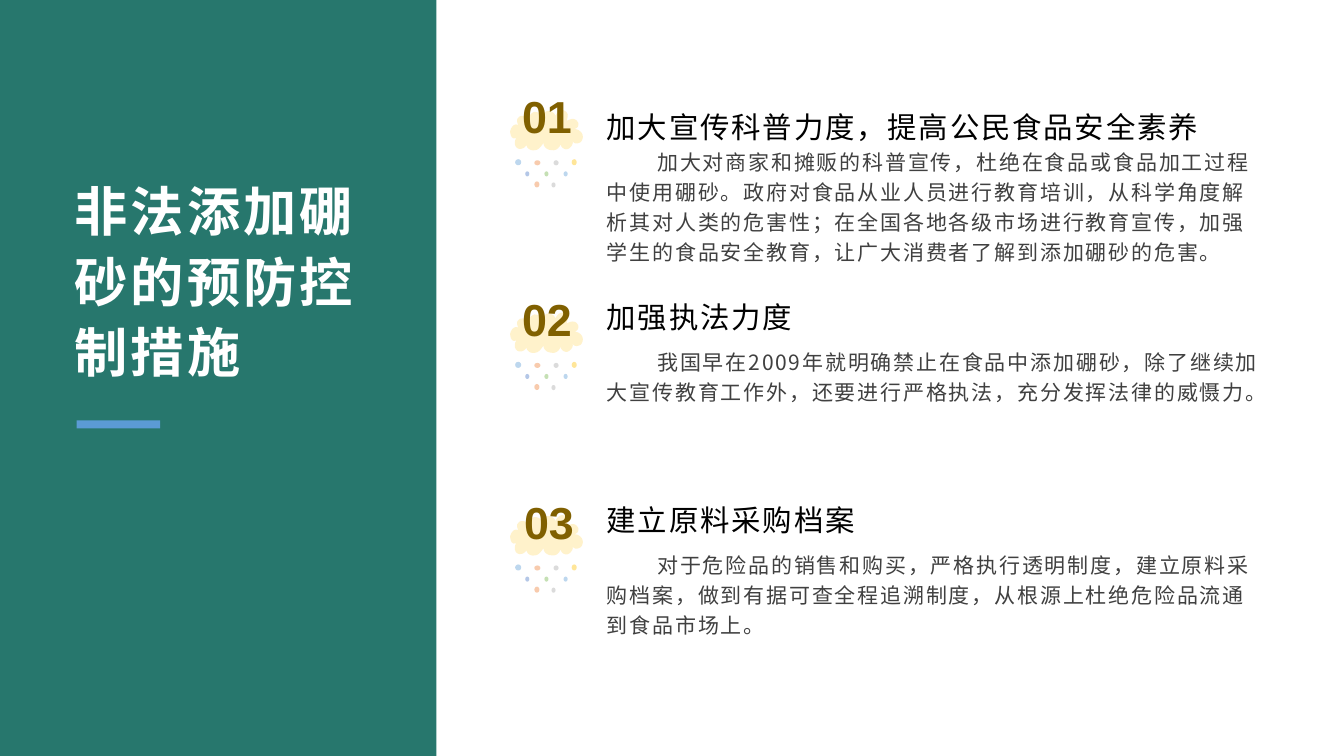
import lxml.etree
import pptx
import pptx.dml.color
import pptx.enum.shapes
import pptx.enum.text
import pptx.oxml.ns
import pptx.util

Inches = pptx.util.Inches
Pt = pptx.util.Pt
SHAPE = pptx.enum.shapes.MSO_SHAPE
ALIGN = pptx.enum.text.PP_ALIGN
ANCHOR = pptx.enum.text.MSO_ANCHOR
qn = pptx.oxml.ns.qn

STEP = 2.01  # drop from one measure to the next
LEFT, TOP = 5.06, 1.09  # corner of the first cloud

# Cloud outline in hundredths of an inch: a start, then Bézier triples
START = (52, 0)
CURVES = [
    (49, 0, 46, 3, 45, 6), (44, 3, 41, 1, 38, 1), (35, 1, 32, 4, 33, 7),
    (31, 4, 28, 2, 24, 2), (21, 3, 18, 6, 18, 9), (17, 8, 15, 6, 13, 6),
    (11, 6, 9, 6, 8, 8), (6, 9, 7, 13, 8, 15), (4, 13, 1, 17, 0, 21),
    (0, 24, 1, 30, 6, 28), (4, 31, 4, 36, 7, 38), (10, 40, 15, 38, 16, 35),
    (17, 39, 21, 41, 25, 40), (28, 40, 31, 36, 33, 33), (33, 37, 37, 40, 41, 40),
    (45, 41, 49, 38, 50, 34), (50, 37, 54, 40, 57, 39), (60, 38, 63, 34, 62, 31),
    (63, 34, 67, 34, 70, 32), (72, 30, 73, 26, 71, 23), (69, 20, 66, 19, 63, 19),
    (65, 19, 66, 18, 67, 17), (68, 15, 68, 13, 67, 12), (66, 10, 64, 9, 62, 9),
    (60, 9, 58, 10, 56, 11), (56, 11, 57, 7, 57, 7), (58, 3, 55, 1, 52, 0),
]

# Rain drops in hundredths of an inch: left, top, width, height, colour
DROPS = [
    (15, 61, 4, 5, "B4C7E7"), (41, 72, 4, 5, "DBDBDB"), (61, 49, 5, 6, "FFE699"),
    (43, 50, 5, 5, "DBDBDB"), (24, 71, 5, 6, "F8CBAD"), (34, 61, 4, 5, "C5E0B4"),
    (5, 49, 6, 6, "BDD7EE"), (53, 61, 4, 5, "BDD7EE"), (24, 50, 6, 5, "F8CBAD"),
]


def color(code):
    return pptx.dml.color.RGBColor.from_string(code)


def write(par, text, size, ink, font="Noto Sans CJK SC", bold=False, gap=0,
          align=ALIGN.LEFT, line=1.0, after=0, indent=0):
    par.alignment, par.line_spacing = align, line
    par.space_before, par.space_after = Pt(0), Pt(after)
    if indent:
        props = par._p.get_or_add_pPr()
        props.set("marL", "0")
        props.set("indent", str(Inches(indent)))
    run = par.add_run()
    run.text = text
    run.font.size, run.font.bold = Pt(size), bold
    run.font.color.rgb = color(ink)
    run.font.name = font
    props = run._r.get_or_add_rPr()
    props.set("spc", str(round(gap * 100)))
    lxml.etree.SubElement(props, qn("a:ea")).set("typeface", font)


def outline():
    """Points along the cloud's curves, in hundredths of an inch."""
    x, y = START
    for ax, ay, bx, by, cx, cy in CURVES:
        for t in (0.2, 0.4, 0.6, 0.8, 1):
            u = 1 - t
            k = (u ** 3, 3 * u * u * t, 3 * u * t * t, t ** 3)
            yield (k[0] * x + k[1] * ax + k[2] * bx + k[3] * cx,
                   k[0] * y + k[1] * ay + k[2] * by + k[3] * cy)
        x, y = cx, cy


class Page:
    head = dict(size=21, ink="000000", gap=1.3)
    body = dict(size=15, ink="404040", gap=1.3, line=1.2, indent=0.5)
    mark = dict(size=32, ink="806000", font="Arial", bold=True, align=ALIGN.CENTER)
    main = dict(size=38, ink="FFFFFF", bold=True, gap=2.2, line=1.1)

    def __init__(self, deck):
        self.slide = deck.slides.add_slide(deck.slide_layouts[5])
        self.shapes = self.slide.shapes

    def paint(self, shape, fill):
        shape.fill.solid()
        shape.fill.fore_color.rgb = color(fill)
        shape.line.fill.background()
        shape.shadow.inherit = False
        return shape

    def shape(self, kind, x, y, w, h, fill, home=None):
        box = [Inches(v) for v in (x, y, w, h)]
        return self.paint((home or self.shapes).add_shape(kind, *box), fill)

    def frame(self, shape, pad=(0.1, 0.05, 0.1, 0.05), anchor=ANCHOR.TOP):
        frame = shape.text_frame
        frame.word_wrap = True
        frame.auto_size = pptx.enum.text.MSO_AUTO_SIZE.NONE
        frame.vertical_anchor = anchor
        (frame.margin_left, frame.margin_top,
         frame.margin_right, frame.margin_bottom) = map(Inches, pad)
        return frame

    def text(self, x, y, w, h, home=None, **look):
        box = [Inches(v) for v in (x, y, w, h)]
        return self.frame((home or self.shapes).add_textbox(*box), **look)

    def title(self, x, y, w, h, text):
        title = self.shapes.title
        title.left, title.top = Inches(x), Inches(y)
        title.width, title.height = Inches(w), Inches(h)
        frame = self.frame(title, (0.07, 0.03, 0.07, 0.03), ANCHOR.BOTTOM)
        write(frame.paragraphs[0], text, **self.main)

    def panel(self, *box, fill):
        panel = self.shape(SHAPE.RECTANGLE, *box, fill)
        self.shapes.title.element.addprevious(panel.element)

    def cloud(self, home, x, y):
        def place(dx, dy):
            return Inches(x + dx / 100), Inches(y + dy / 100)
        path = home.build_freeform(*place(*START))
        path.add_line_segments([place(*spot) for spot in outline()], close=True)
        cloud = self.paint(path.convert_to_shape(), "FFE699")
        tint = cloud.element.spPr.find(qn("a:solidFill"))[0]
        lxml.etree.SubElement(tint, qn("a:alpha")).set("val", "50000")

    def badge(self, x, y, shift, label):
        home = self.shapes.add_group_shape().shapes
        self.cloud(home, x, y)
        for dx, dy, w, h, fill in DROPS:
            self.shape(SHAPE.OVAL, x + dx / 100, y + dy / 100, w / 100, h / 100,
                       fill, home)
        frame = self.text(x - 0.06 + shift, y - 0.33, 0.85, 0.78, home,
                          anchor=ANCHOR.MIDDLE)
        write(frame.paragraphs[0], label, **self.mark)


def main():
    deck = pptx.Presentation()
    deck.slide_width, deck.slide_height = Inches(13.33), Inches(7.5)
    page = Page(deck)

    # Side panel with the title
    page.panel(0, 0, 4.33, 7.5, fill="27776D")
    page.title(0.67, 1.33, 3, 2.5, "非法添加硼砂的预防控制措施")
    page.shape(SHAPE.RECTANGLE, 0.76, 4.17, 0.83, 0.08, "5B9BD5")

    # Numbered clouds
    for i, shift in enumerate((0, 0, 0.02)):
        page.badge(LEFT, TOP + i * STEP, shift, f"{i + 1:02}")

    # First measure: heading and body share a box
    frame = page.text(5.92, 0.9, 6.75, 1.81, pad=(0.1, 0.04, 0.1, 0.28))
    write(frame.paragraphs[0], "加大宣传科普力度，提高公民食品安全素养",
          line=1.4, **page.head)
    write(frame.add_paragraph(),
          "加大对商家和摊贩的科普宣传，杜绝在食品或食品加工过程中使用硼砂。"
          "政府对食品从业人员进行教育培训，从科学角度解析其对人类的危害性；"
          "在全国各地各级市场进行教育宣传，加强学生的食品安全教育，"
          "让广大消费者了解到添加硼砂的危害。", **page.body)

    # Other measures: heading box above body box
    rest = [
        ("加强执法力度",
         "我国早在2009年就明确禁止在食品中添加硼砂，除了继续加大宣传教育工作外，"
         "还要进行严格执法，充分发挥法律的威慑力。"),
        ("建立原料采购档案",
         "对于危险品的销售和购买，严格执行透明制度，建立原料采购档案，"
         "做到有据可查全程追溯制度，从根源上杜绝危险品流通到食品市场上。"),
    ]
    for i, (head, body) in enumerate(rest):
        y = 2.92 + i * STEP
        frame = page.text(5.92, y + 0.45, 6.75, 1.36)
        write(frame.paragraphs[0], body, after=8, **page.body)
        frame = page.text(5.92, y, 6.75, 0.52)
        write(frame.paragraphs[0], head, **page.head)

    deck.save("out.pptx")


if __name__ == "__main__":
    main()
